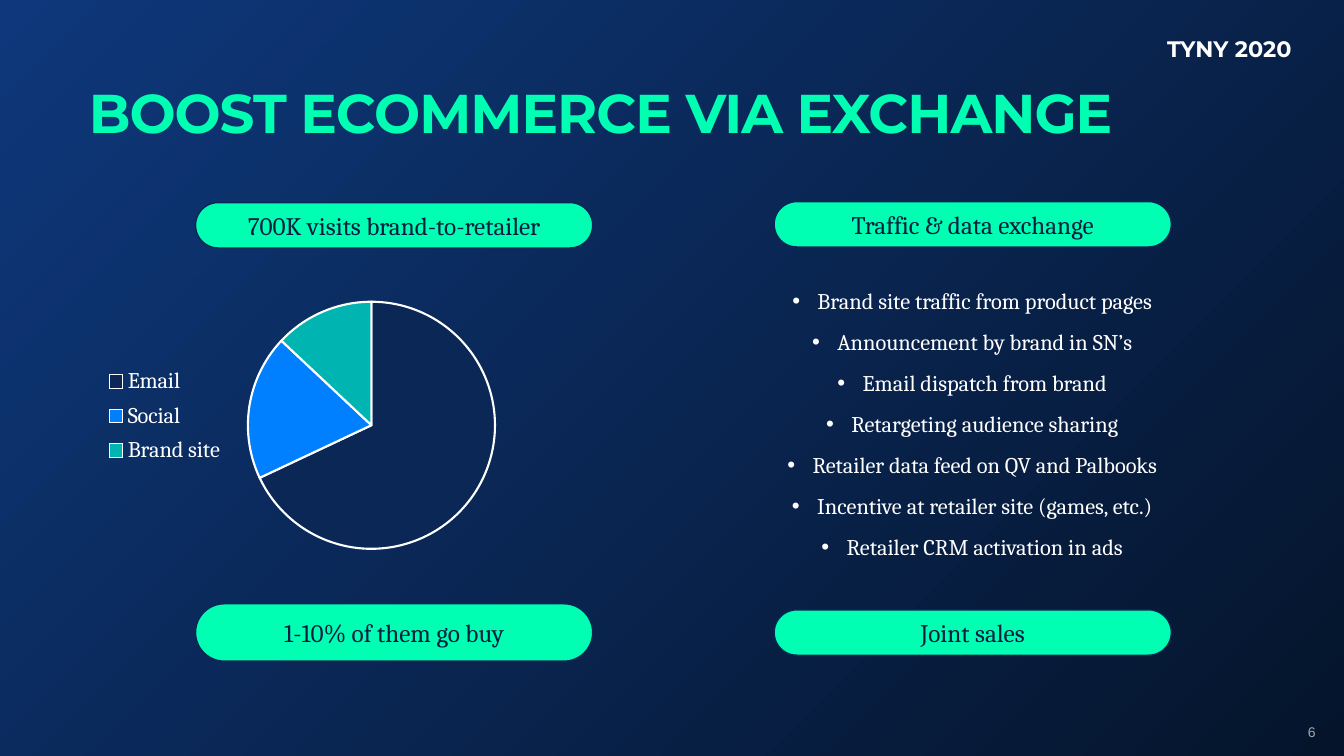
from lxml import etree
from pptx import Presentation, util as u
from pptx.chart.data import CategoryChartData
from pptx.dml.color import RGBColor
from pptx.enum import chart as charts, shapes, text
from pptx.oxml import parse_xml
from pptx.oxml.ns import nsdecls, qn

Pt = u.Pt
MINT, NAVY, INK, WHITE = "00FFB3", "0A2756", "071C3F", "FFFFFF"
color = RGBColor.from_string


def write(shape, lines, size, ink, font="Cambria", bold=False, align="LEFT",
          anchor="TOP", inset=3.6, spacing=None, after=0, bullet=False, kerning=None):
    frame = shape.text_frame
    frame.word_wrap = True
    frame.auto_size = text.MSO_AUTO_SIZE.NONE
    frame.vertical_anchor = getattr(text.MSO_ANCHOR, anchor)
    frame.margin_left = frame.margin_right = Pt(inset)
    frame.margin_top = frame.margin_bottom = Pt(min(inset, 3.6))
    for index, line in enumerate(lines):
        paragraph = frame.add_paragraph() if index else frame.paragraphs[0]
        paragraph.alignment = getattr(text.PP_ALIGN, align)
        paragraph.line_spacing = spacing
        paragraph.space_before, paragraph.space_after = Pt(0), Pt(after)
        if bullet:
            properties = paragraph._p.get_or_add_pPr()
            properties.set("marL", str(Pt(18)))
            properties.set("indent", str(-Pt(18)))
            etree.SubElement(properties, qn("a:buFont")).set("typeface", "Arial")
            etree.SubElement(properties, qn("a:buChar")).set("char", "•")
        run = paragraph.add_run()
        run.text = line
        run.font.name, run.font.size, run.font.bold = font, Pt(size), bold
        run.font.color.rgb = color(ink)
        if kerning is not None:
            run._r.get_or_add_rPr().set("spc", str(kerning))


presentation = Presentation()
presentation.slide_width, presentation.slide_height = Pt(960), Pt(540)
slide = presentation.slides.add_slide(presentation.slide_layouts[5])

# Background: radial gradient from the top left corner
background = slide.background.fill
background.gradient()
for stop, shade, position in zip(background.gradient_stops, ("0E387B", "05142B"), (0, 1)):
    stop.color.rgb, stop.position = color(shade), position
gradient = slide.element.find(".//" + qn("a:gradFill"))
gradient.replace(gradient.find(qn("a:lin")), parse_xml(
    f'<a:path {nsdecls("a")} path="circle"><a:fillToRect r="100000" b="100000"/></a:path>'))

# Title, event label and page number
title = slide.shapes.title
title.left, title.top, title.width, title.height = Pt(63.4), Pt(65.5), Pt(834.5), Pt(31.7)
write(title, ["BOOST ECOMMERCE VIA EXCHANGE"], 39, MINT, font="Montserrat", bold=True,
      inset=0, spacing=0.8, kerning=-70)
event = slide.shapes.add_textbox(Pt(830), Pt(21.6), Pt(114), Pt(26.6))
write(event, ["TYNY 2020"], 16, WHITE, font="Montserrat", bold=True)
page = slide.shapes.add_textbox(Pt(912.2), Pt(508.3), Pt(34.6), Pt(28.8))
write(page, ["6"], 10, "A7A7A7", font="Arial", align="RIGHT", anchor="MIDDLE", inset=7.2)

# Pie of visit sources
data = CategoryChartData()
data.categories = ["Email", "Social", "Brand site"]
data.add_series("Series 1", (68, 19, 13))
chart = slide.shapes.add_chart(charts.XL_CHART_TYPE.PIE, Pt(53.3), Pt(168.5),
                               Pt(390.2), Pt(260), data).chart
chart.has_title = False
chart.font.name, chart.font.size = "Cambria", Pt(16)
chart.font.color.rgb = color(WHITE)
plot = chart.plots[0]
plot.vary_by_categories = True
for index, fill in enumerate((NAVY, "0080FF", "00B5B1")):
    slice_format = plot.series[0].points[index].format
    slice_format.fill.solid()
    slice_format.fill.fore_color.rgb = color(fill)
    slice_format.line.color.rgb = color(WHITE)
    slice_format.line.width = Pt(1.5)
chart.has_legend = True
legend = chart.legend
legend.position = charts.XL_LEGEND_POSITION.LEFT
legend.include_in_layout = False
legend.font.name, legend.font.size = "Cambria", Pt(16)
legend.font.color.rgb = color(WHITE)

# Fixed places for the pie and its legend, as shares of the chart
plot_area = chart._chartSpace.find(".//" + qn("c:plotArea"))
for parent, target, box in (
        (plot_area, '<c:layoutTarget val="inner"/>', (0.317, 0.181, 0.453, 0.679)),
        (legend._element, "", (0.05, 0.34, 0.23, 0.31))):
    for old in parent.findall(qn("c:layout")):
        parent.remove(old)
    modes = '<c:xMode val="edge"/><c:yMode val="edge"/>'
    sizes = "".join(f'<c:{key} val="{value}"/>' for key, value in zip("xywh", box))
    layout = parse_xml(f'<c:layout {nsdecls("c")}><c:manualLayout>{target}{modes}{sizes}'
                       '</c:manualLayout></c:layout>')
    parent.insert(0 if target else 1, layout)

# Exchange methods
methods = slide.shapes.add_textbox(Pt(504), Pt(203.8), Pt(380.9), Pt(286.6))
write(methods, [
    "Brand site traffic from product pages",
    "Announcement by brand in SN’s",
    "Email dispatch from brand",
    "Retargeting audience sharing",
    "Retailer data feed on QV and Palbooks",
    "Incentive at retailer site (games, etc.)",
    "Retailer CRM activation in ads",
], 16, WHITE, align="CENTER", inset=7.2, spacing=0.9, after=12, bullet=True)

# Pills above and below each column
for label, left, top, height in (
        ("700K visits brand-to-retailer", 139.7, 144.7, 32.4),
        ("1-10% of them go buy", 139.7, 431.3, 41),
        ("Traffic & data exchange", 553, 144, 32.4),
        ("Joint sales", 553, 435.6, 32.4)):
    pill = slide.shapes.add_shape(shapes.MSO_SHAPE.ROUNDED_RECTANGLE,
                                  Pt(left), Pt(top), Pt(283.7), Pt(height))
    pill.adjustments[0] = 0.5
    pill.shadow.inherit = False
    pill.fill.solid()
    pill.fill.fore_color.rgb = color(MINT)
    pill.line.color.rgb = color(NAVY)
    pill.line.width = Pt(1)
    write(pill, [label], 18, INK, align="CENTER", anchor="MIDDLE")

presentation.save("out.pptx")
